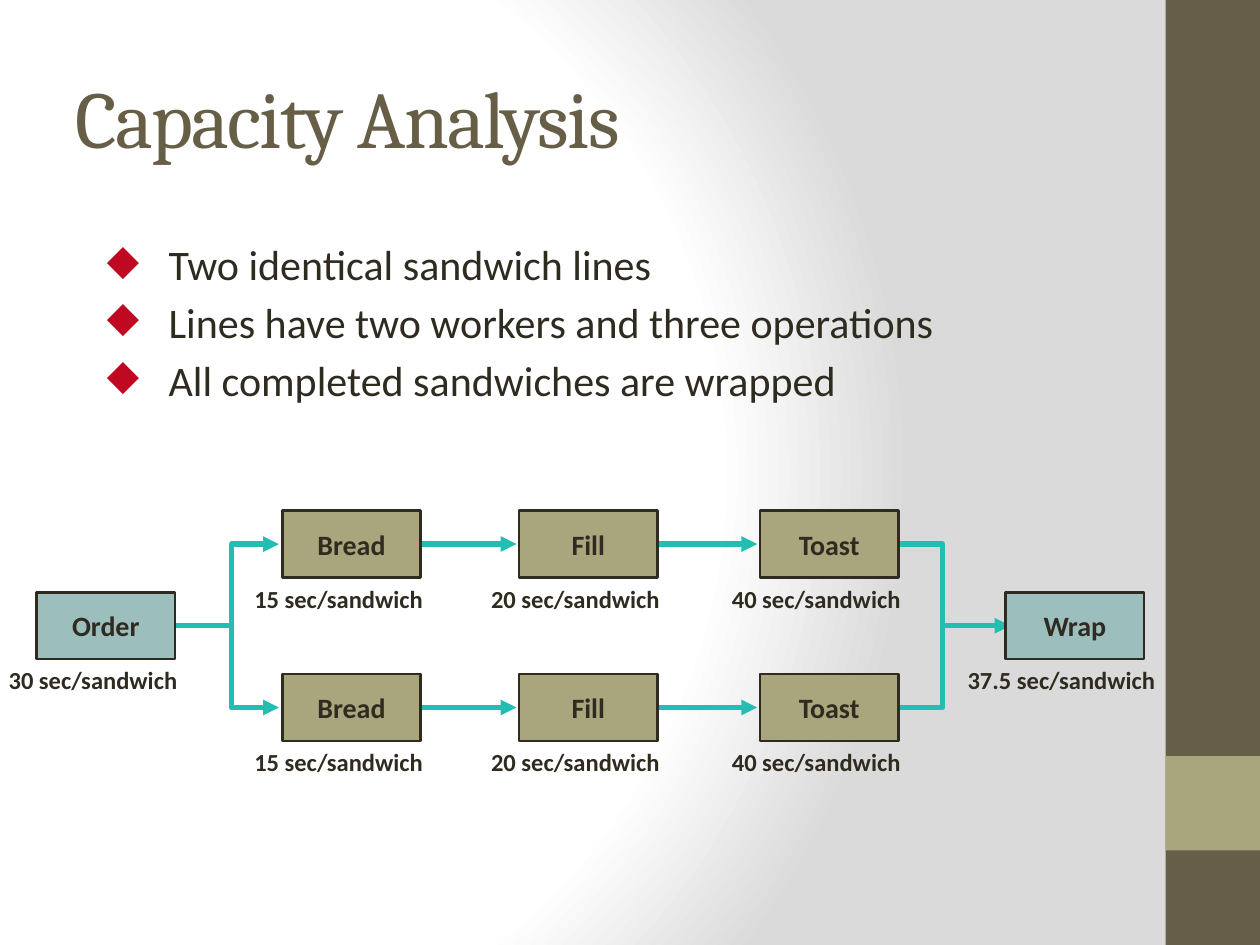
from lxml.etree import SubElement
from pptx import Presentation
from pptx.dml.color import RGBColor
from pptx.enum.shapes import MSO_CONNECTOR as CONN, MSO_SHAPE as SHAPE
from pptx.enum.text import MSO_ANCHOR as ANCHOR, PP_ALIGN as ALIGN
from pptx.oxml import parse_xml
from pptx.oxml.ns import nsdecls, qn
from pptx.util import Pt

DARK, BROWN, OLIVE, TEAL, BLUE, RED = "2F2B20", "675E47", "A9A57C", "24BDB2", "9CBEBD", "BF0922"
TITLE = "Capacity Analysis"
BULLETS = [
    "Two identical sandwich lines",
    "Lines have two workers and three operations",
    "All completed sandwiches are wrapped",
]
BARS = [(0, 540, BROWN), (432, 54, OLIVE)]
LINE_STEPS = [
    ("Bread", "15 sec/sandwich", 161.3),
    ("Fill", "20 sec/sandwich", 296.6),
    ("Toast", "40 sec/sandwich", 434.2),
]
ORDER = ("Order", "30 sec/sandwich", 20.9)
WRAP = ("Wrap", "37.5 sec/sandwich", 574.6)
BOX_W, BOX_H = 79.2, 38.2
ROWS = [310.9, 404.3]
MIDDLE = sum(ROWS) / 2
SPLIT_X, MERGE_X = 132.3, 538.6
TITLE_FONT = dict(name="Cambria", size=Pt(46))
BODY_FONT = dict(name="Calibri", size=Pt(24))
BOX_FONT = dict(name="Calibri", size=Pt(16), bold=True)
LABEL_FONT = dict(name="Calibri", size=Pt(14), bold=True)
GRADIENT = f"""<a:gradFill {nsdecls("a")} rotWithShape="1"><a:gsLst>
<a:gs pos="0"><a:srgbClr val="FFFFFF"/></a:gs>
<a:gs pos="75000"><a:srgbClr val="FFFFFF"/></a:gs>
<a:gs pos="100000"><a:srgbClr val="DADADA"/></a:gs></a:gsLst>
<a:path path="circle"><a:fillToRect l="20000" t="50000" r="100000" b="50000"/></a:path>
</a:gradFill>"""


def rgb(color):
    return RGBColor.from_string(color)


def write(p, text, font, color=DARK):
    r = p.add_run()
    r.text = text
    for key, value in font.items():
        setattr(r.font, key, value)
    r.font.color.rgb = rgb(color)
    return r


def add_rect(shapes, x, y, w, h, fill):
    sp = shapes.add_shape(SHAPE.RECTANGLE, Pt(x), Pt(y), Pt(w), Pt(h))
    sp.shadow.inherit = False
    sp.fill.solid()
    sp.fill.fore_color.rgb = rgb(fill)
    sp.line.fill.background()
    return sp


def add_text(shapes, x, y, w, h):
    tf = shapes.add_textbox(Pt(x), Pt(y), Pt(w), Pt(h)).text_frame
    tf.word_wrap = True
    return tf


def style_line(sp, ends=()):
    sp.line.color.rgb = rgb(TEAL)
    sp.line.width = Pt(3)
    for end in ends:
        SubElement(sp.line._get_or_add_ln(), qn(f"a:{end}"), type="triangle")


def add_line(shapes, x1, x2, y, ends=()):
    cx = shapes.add_connector(CONN.STRAIGHT, Pt(x1), Pt(y), Pt(x2), Pt(y))
    style_line(cx, ends)
    SubElement(cx._element.spPr, qn("a:effectLst"))


def add_bracket(shapes, open_x, spine_x, ends=()):
    top, bottom = ROWS
    points = [(spine_x, top), (spine_x, bottom), (open_x, bottom)]
    builder = shapes.build_freeform(Pt(open_x), Pt(top))
    builder.add_line_segments([(Pt(x), Pt(y)) for x, y in points], close=False)
    sp = builder.convert_to_shape()
    sp.shadow.inherit = False
    sp.fill.background()
    style_line(sp, ends)


def add_step(shapes, step, y, fill, label_w=125.3):
    name, time, x = step
    sp = add_rect(shapes, x, y - BOX_H / 2, BOX_W, BOX_H, fill)
    sp.line.color.rgb = rgb(DARK)
    sp.line.width = Pt(1.5)
    tf = sp.text_frame
    tf.word_wrap = False
    tf.vertical_anchor = ANCHOR.MIDDLE
    tf.paragraphs[0].alignment = ALIGN.CENTER
    write(tf.paragraphs[0], name, BOX_FONT)
    tf = add_text(shapes, x + (BOX_W - label_w) / 2, y + BOX_H / 2, label_w, 24)
    write(tf.paragraphs[0], time, LABEL_FONT)


def add_bullets(shapes):
    tf = add_text(shapes, 54, 133, 612, 116.6)
    for i, text in enumerate(BULLETS):
        p = tf.add_paragraph() if i else tf.paragraphs[0]
        pPr = p._p.get_or_add_pPr()
        pPr.set("marL", str(Pt(35.3)))
        pPr.set("indent", str(-Pt(35.3)))
        SubElement(SubElement(pPr, qn("a:buClr")), qn("a:srgbClr"), val=RED)
        SubElement(pPr, qn("a:buChar"), char="◆")
        if i:
            p.space_before = Pt(4.2)
        write(p, text, BODY_FONT)


def add_flow(shapes):
    add_bracket(shapes, 159.4, SPLIT_X, ("headEnd", "tailEnd"))
    add_line(shapes, 99.4, SPLIT_X, MIDDLE)
    add_bracket(shapes, 511.2, MERGE_X)
    add_line(shapes, MERGE_X, 577.4, MIDDLE, ("tailEnd",))
    for y in ROWS:
        for _, _, x in LINE_STEPS[1:]:
            add_line(shapes, x - 60.5, x - 1.5, y, ("tailEnd",))
        for step in LINE_STEPS:
            add_step(shapes, step, y, OLIVE)
    add_step(shapes, ORDER, MIDDLE, BLUE)
    add_step(shapes, WRAP, MIDDLE, BLUE, 136.8)


def main():
    prs = Presentation()
    prs.slide_width, prs.slide_height = Pt(720), Pt(540)
    s = prs.slides.add_slide(prs.slide_layouts[6])
    s.background.fill.gradient()
    grad = s._element.find(".//" + qn("a:gradFill"))
    grad.getparent().replace(grad, parse_xml(GRADIENT))
    for y, h, color in BARS:
        add_rect(s.shapes, 666, y, 54, h, color)
    tf = add_text(s.shapes, 36, 21.6, 600, 90)
    tf.vertical_anchor = ANCHOR.MIDDLE
    r = write(tf.paragraphs[0], TITLE, TITLE_FONT, BROWN)
    r.font._element.set("spc", "-100")
    add_bullets(s.shapes)
    add_flow(s.shapes.add_group_shape().shapes)
    prs.save("out.pptx")


if __name__ == "__main__":
    main()
